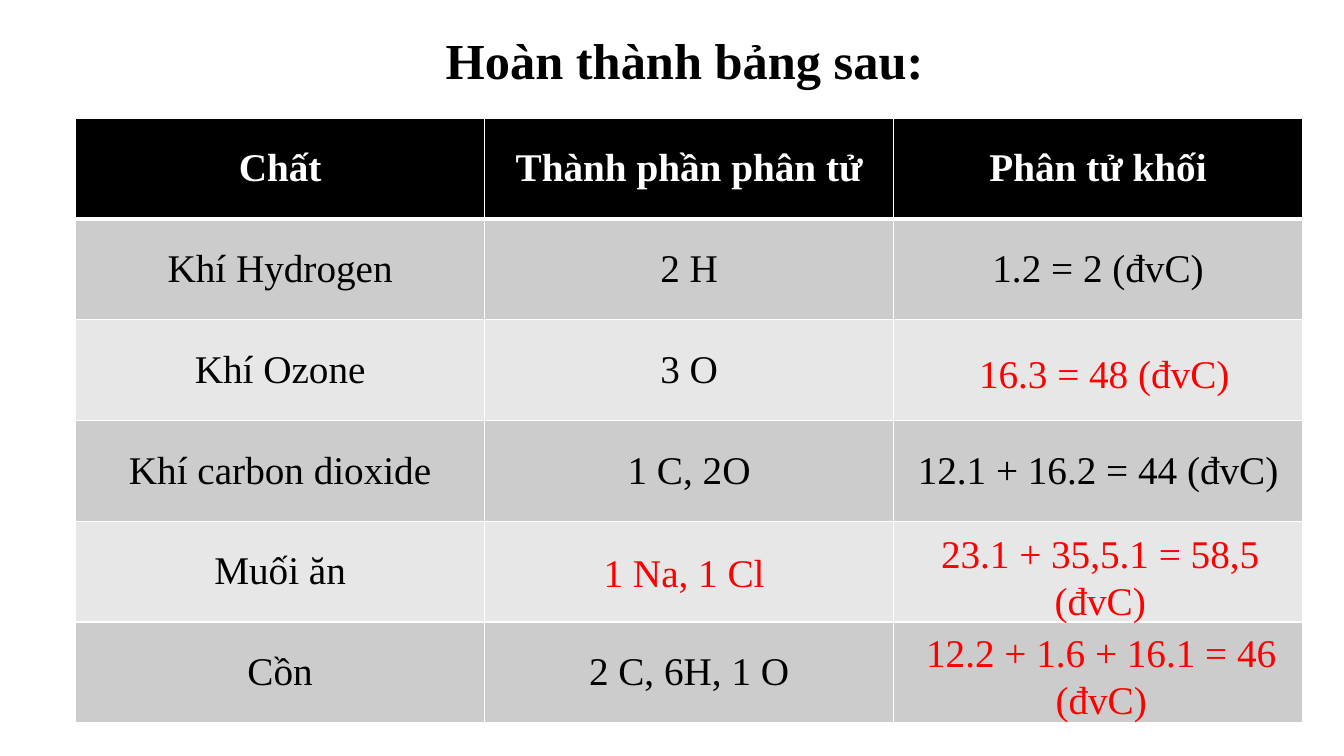
from dataclasses import dataclass
from lxml.etree import SubElement
from pptx import Presentation
from pptx.dml.color import RGBColor
from pptx.enum.text import MSO_ANCHOR, MSO_AUTO_SIZE, PP_ALIGN
from pptx.oxml.ns import qn
from pptx.util import Inches, Pt


@dataclass(frozen=True)
class Theme:
    font: str = "Times New Roman"
    black: str = "000000"
    white: str = "FFFFFF"
    answer: str = "FF0000"
    dark_band: str = "CCCCCC"
    light_band: str = "E7E7E7"
    title_size: int = 36
    body_size: int = 28
    rule: int = 1
    header_rule: int = 3


@dataclass(frozen=True)
class Box:
    left: float
    top: float
    width: float
    height: float

    def cell(self, row, column, rows, columns):
        width, height = self.width / columns, self.height / rows
        return Box(self.left + column * width, self.top + row * height, width, height)

    def centred(self, width, height, right, down):
        return Box(self.left + (self.width - width) / 2 + right,
                   self.top + (self.height - height) / 2 + down, width, height)

    def lengths(self):
        return [Inches(value) for value in (self.left, self.top, self.width, self.height)]


THEME = Theme()
SLIDE_WIDTH, SLIDE_HEIGHT = 13.33, 7.5
TITLE_BOX = Box(2.83, 0.06, 7.92, 1.05)
TABLE_BOX = Box(0.75, 1.17, 12.17, 6)
ROWS = [
    ("Chất", "Thành phần phân tử", "Phân tử khối"),
    ("Khí Hydrogen", "2 H", "1.2 = 2 (đvC)"),
    ("Khí Ozone", "3 O", ""),
    ("Khí carbon dioxide", "1 C, 2O", "12.1 + 16.2 = 44 (đvC)"),
    ("Muối ăn", "", ""),
    ("Cồn", "2 C, 6H, 1 O", ""),
]
ANSWERS = [
    (2, 2, "16.3 = 48 (đvC)", (3.25, 0.57), (0.06, 0.03)),
    (4, 1, "1 Na, 1 Cl", (2.58, 0.57), (-0.05, 0)),
    (4, 2, "23.1 + 35,5.1 = 58,5 (đvC)", (4.25, 1.04), (0.02, 0.05)),
    (5, 2, "12.2 + 1.6 + 16.1 = 46 (đvC)", (3.92, 1.04), (0.03, 0.03)),
]


def write(frame, text, size, color, bold=False):
    para = frame.paragraphs[0]
    para.alignment = PP_ALIGN.CENTER
    span = para.add_run()
    span.text = text
    span.font.name = THEME.font
    span.font.size = Pt(size)
    span.font.bold = bold
    span.font.color.rgb = RGBColor.from_string(color)


def rule_cell(cell, top, bottom):
    properties = cell._tc.get_or_add_tcPr()
    for side, width in (("L", THEME.rule), ("R", THEME.rule), ("T", top), ("B", bottom)):
        line = SubElement(properties, qn(f"a:ln{side}"), w=str(Pt(width)))
        fill = SubElement(line, qn("a:solidFill"))
        SubElement(fill, qn("a:srgbClr"), val=THEME.white)


def add_title(page, box, text):
    title = page.shapes.title
    title.left, title.top, title.width, title.height = box.lengths()
    frame = title.text_frame
    frame.word_wrap = True
    frame.vertical_anchor = MSO_ANCHOR.MIDDLE
    write(frame, text, THEME.title_size, THEME.black, True)


def add_substance_table(page, box, rows):
    table = page.shapes.add_table(len(rows), len(rows[0]), *box.lengths()).table
    for row, texts in enumerate(rows):
        header = row == 0
        band = THEME.dark_band if row % 2 else THEME.light_band
        for column, text in enumerate(texts):
            cell = table.cell(row, column)
            cell.vertical_anchor = MSO_ANCHOR.MIDDLE
            rule_cell(cell, THEME.header_rule if row == 1 else THEME.rule,
                      THEME.header_rule if header else THEME.rule)
            cell.fill.solid()
            cell.fill.fore_color.rgb = RGBColor.from_string(THEME.black if header else band)
            if text:
                write(cell.text_frame, text, THEME.body_size,
                      THEME.white if header else THEME.black, header)


def add_answer(page, box, text):
    frame = page.shapes.add_textbox(*box.lengths()).text_frame
    frame.word_wrap = True
    frame.auto_size = MSO_AUTO_SIZE.SHAPE_TO_FIT_TEXT
    frame.vertical_anchor = MSO_ANCHOR.MIDDLE
    write(frame, text, THEME.body_size, THEME.answer)


def main():
    deck = Presentation()
    deck.slide_width, deck.slide_height = Inches(SLIDE_WIDTH), Inches(SLIDE_HEIGHT)
    page = deck.slides.add_slide(deck.slide_layouts.get_by_name("Title Only"))
    add_title(page, TITLE_BOX, "Hoàn thành bảng sau:")
    add_substance_table(page, TABLE_BOX, ROWS)
    for row, column, text, size, shift in ANSWERS:
        cell = TABLE_BOX.cell(row, column, len(ROWS), len(ROWS[0]))
        add_answer(page, cell.centred(*size, *shift), text)
    deck.save("out.pptx")


if __name__ == "__main__":
    main()
